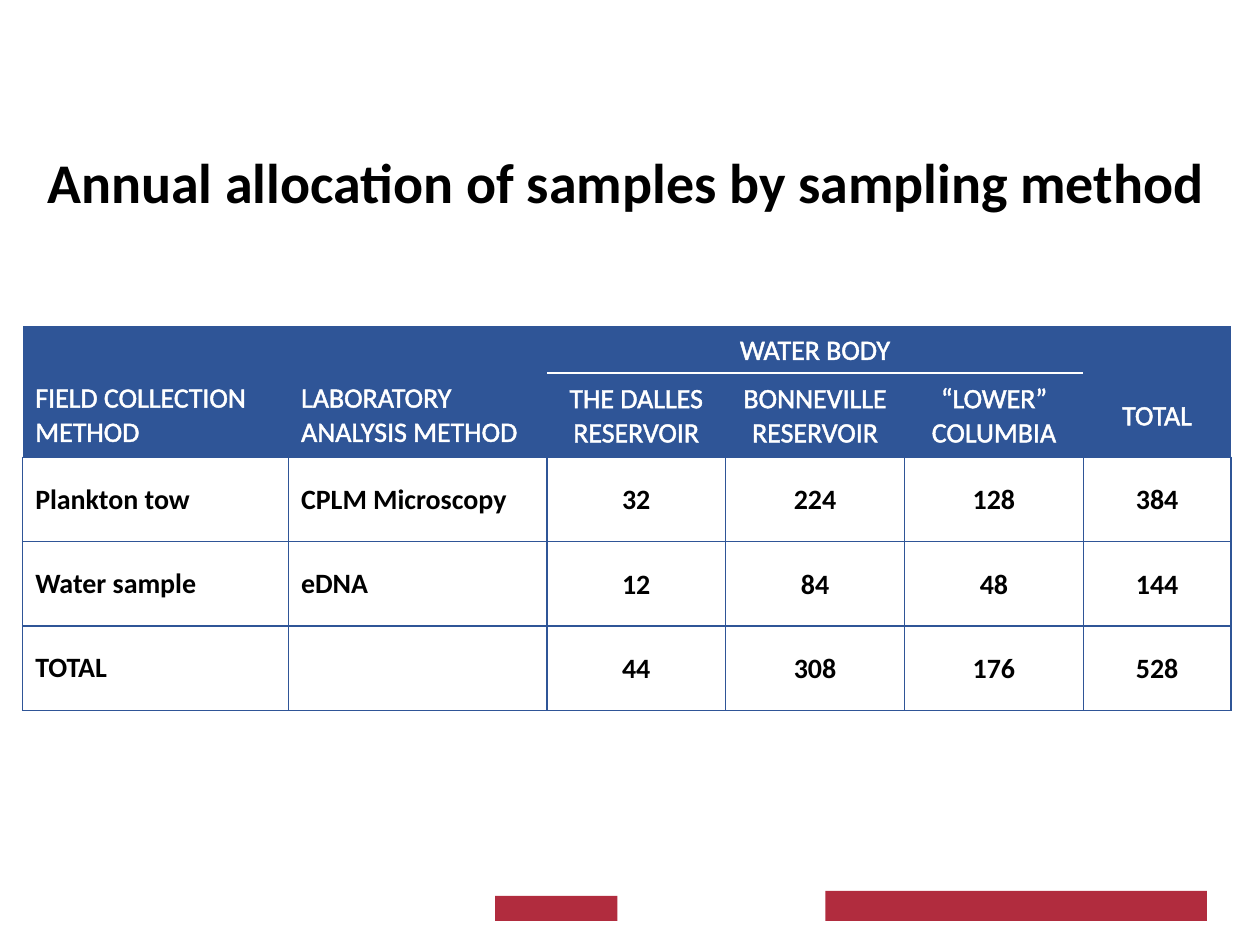
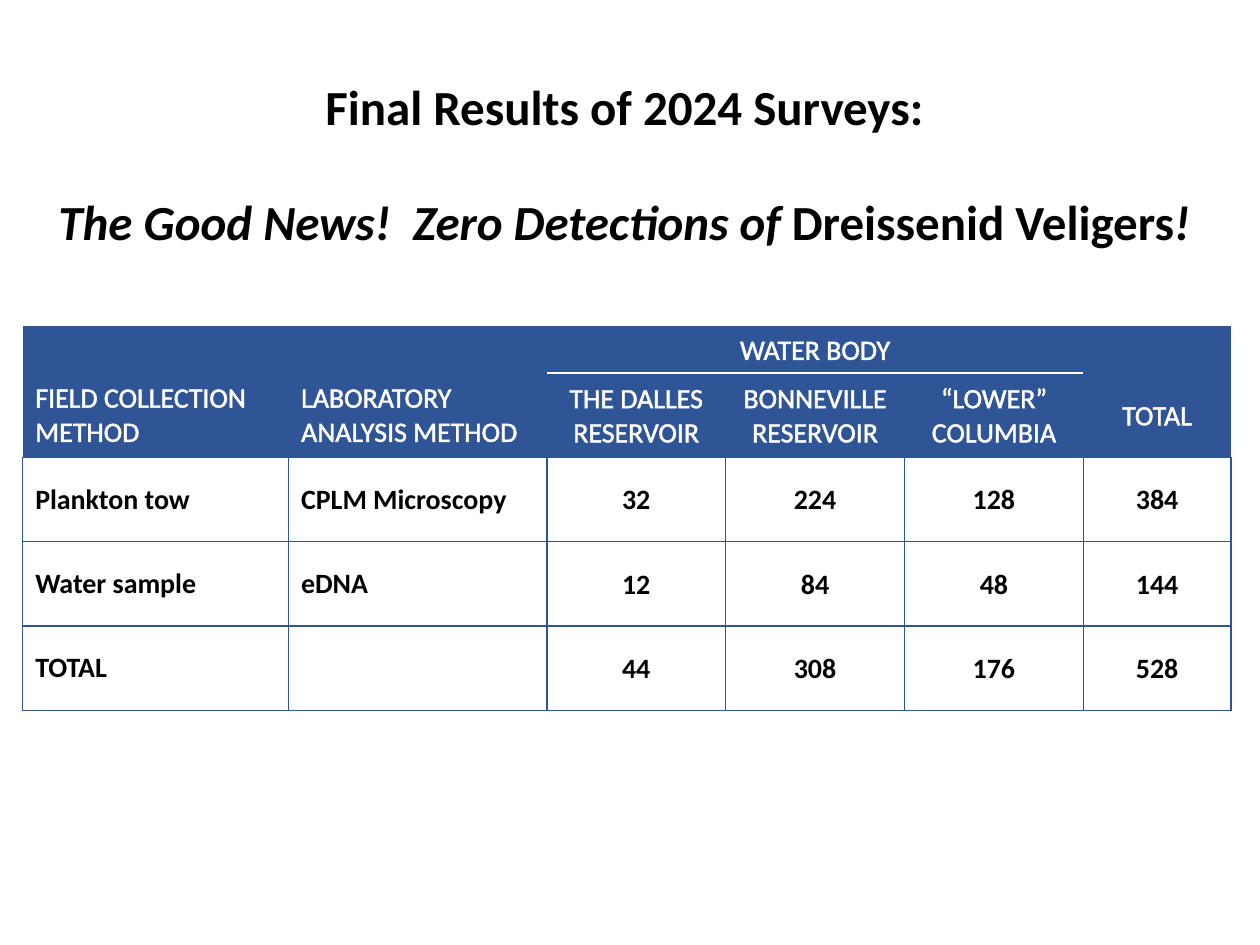
from dataclasses import dataclass

from lxml import etree
from pptx import Presentation
from pptx.dml.color import RGBColor
from pptx.enum.shapes import MSO_SHAPE
from pptx.enum.text import MSO_ANCHOR, PP_ALIGN
from pptx.oxml.ns import qn
from pptx.util import Inches, Pt

RECT = MSO_SHAPE.RECTANGLE
MIDDLE = MSO_ANCHOR.MIDDLE
CENTER, LEFT = PP_ALIGN.CENTER, PP_ALIGN.LEFT
SIDES = ("L", "R", "T", "B")


@dataclass(frozen=True)
class Theme:
    font: str = "Calibri"
    ink: str = "000000"
    paper: str = "FFFFFF"
    blue: str = "2F5597"
    red: str = "B12C3E"
    title_size: int = 32
    results_size: int = 28
    table_size: int = 16


COLUMN_WIDTHS = (2.11, 2.05, 1.42, 1.42, 1.42, 1.17)
ROW_HEIGHTS = (0.37, 0.67, 0.67, 0.67, 0.67)
HEADER_ROWS = 2
LABEL_COLUMNS = 2
WATER_BODY_COLUMNS = (2, 3, 4)
SAMPLE_ROWS = (
    ("", "", "WATER BODY", "", "", ""),
    ("FIELD COLLECTION METHOD", "LABORATORY ANALYSIS METHOD", "THE DALLES RESERVOIR",
     "BONNEVILLE RESERVOIR", "“LOWER” COLUMBIA", "TOTAL"),
    ("Plankton tow", "CPLM Microscopy", "32", "224", "128", "384"),
    ("Water sample", "eDNA", "12", "84", "48", "144"),
    ("TOTAL", "", "44", "308", "176", "528"),
)


class Deck:
    def __init__(self, theme):
        self.theme = theme
        self.prs = Presentation()
        self.prs.slide_width, self.prs.slide_height = Inches(10), Inches(7.5)
        self.s = None

    def slide(self):
        self.s = self.prs.slides.add_slide(self.prs.slide_layouts[6])

    def style(self, r, size, color, bold=False, italic=False):
        r.font.name = self.theme.font
        r.font.size = Pt(size)
        r.font.color.rgb = RGBColor.from_string(color)
        r.font.bold = bold
        r.font.italic = italic

    def title(self, box, size, lines, gap=0):
        tf = self.s.shapes.add_textbox(*map(Inches, box)).text_frame
        tf.word_wrap = True
        tf.vertical_anchor = MIDDLE
        for i, line in enumerate(lines):
            p = tf.add_paragraph() if i else tf.paragraphs[0]
            p.alignment = CENTER
            if i:
                p.space_before = Pt(gap)
            for text, italic in line:
                r = p.add_run()
                r.text = text
                self.style(r, size, self.theme.ink, True, italic)

    def bar(self, *box):
        sp = self.s.shapes.add_shape(RECT, *map(Inches, box))
        sp.shadow.inherit = False
        sp.fill.solid()
        sp.fill.fore_color.rgb = RGBColor.from_string(self.theme.red)
        sp.line.fill.background()

    def line(self, parent, index, tag, color, width):
        ln = etree.Element(qn(tag), w=str(Pt(width)))
        if color:
            fill = etree.SubElement(ln, qn("a:solidFill"))
            etree.SubElement(fill, qn("a:srgbClr"), val=color)
        else:
            etree.SubElement(ln, qn("a:noFill"))
        parent.insert(index, ln)

    def borders(self, row, column):
        t = self.theme
        if row >= HEADER_ROWS:
            return dict.fromkeys(SIDES, t.blue)
        under_water_body = t.paper if column in WATER_BODY_COLUMNS else None
        if row == 0:
            return {"B": under_water_body}
        return {"T": under_water_body, "B": t.blue}

    def cell(self, cell, row, column, text):
        t = self.theme
        header = row < HEADER_ROWS
        cell.vertical_anchor = MIDDLE
        if not text:
            cell.margin_top = cell.margin_bottom = 0
        elif column >= LABEL_COLUMNS:
            cell.margin_left = cell.margin_right = cell.margin_top = Inches(0.01)
            cell.margin_bottom = 0
        borders = self.borders(row, column)
        tc_pr = cell._tc.get_or_add_tcPr()
        for i, side in enumerate(SIDES):
            self.line(tc_pr, i, f"a:ln{side}", borders.get(side), 1)
        if header:
            cell.fill.solid()
            cell.fill.fore_color.rgb = RGBColor.from_string(t.blue)
        else:
            cell.fill.background()
        if text:
            p = cell.text_frame.paragraphs[0]
            p.text = text
            p.alignment = CENTER if column >= LABEL_COLUMNS else LEFT
            r = p.runs[0]
            self.style(r, t.table_size, t.paper if header else t.ink, not header)
            if header:
                self.line(r.font._element, 0, "a:ln", t.paper, 0.75)

    def sample_table(self):
        frame = self.s.shapes.add_table(
            len(ROW_HEIGHTS), len(COLUMN_WIDTHS), Inches(0.18), Inches(2.59),
            Inches(sum(COLUMN_WIDTHS)), Inches(sum(ROW_HEIGHTS)))
        table = frame.table
        table.first_row = table.horz_banding = False
        for column, width in zip(table.columns, COLUMN_WIDTHS):
            column.width = Inches(width)
        for row, height in zip(table.rows, ROW_HEIGHTS):
            row.height = Inches(height)
        for i, texts in enumerate(SAMPLE_ROWS):
            for j, text in enumerate(texts):
                self.cell(table.cell(i, j), i, j, text)
        for first, last in ((0, 1), (2, 4)):
            table.cell(0, first).merge(table.cell(0, last))


def main():
    theme = Theme()
    deck = Deck(theme)

    deck.slide()
    deck.title((0.18, 0.81, 9.58, 1.25), theme.title_size,
               [[("Annual allocation of samples by sampling method", False)]])
    deck.sample_table()
    deck.bar(3.93, 7.11, 0.97, 0.2)
    deck.bar(6.55, 7.07, 3.03, 0.24)

    deck.slide()
    deck.title((0.33, 0.55, 9.25, 1.5), theme.results_size,
               [[("Final Results of 2024 Surveys:", False)],
                [("The Good News!  Zero Detections of ", True),
                 ("Dreissenid Veligers", False), ("!", True)]], gap=32)
    deck.sample_table()

    deck.prs.save("out.pptx")


if __name__ == "__main__":
    main()
